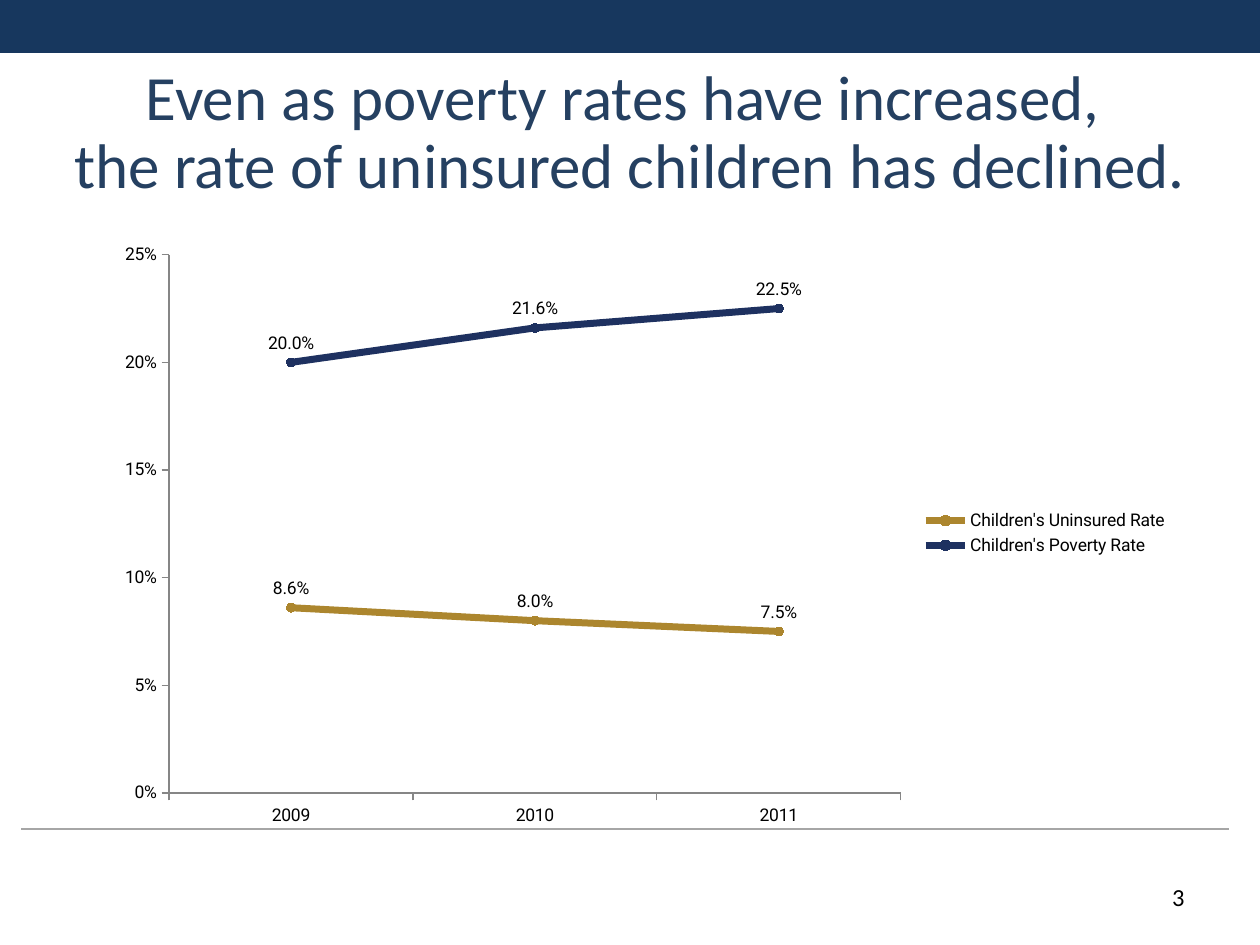
from dataclasses import dataclass

from lxml import etree
from pptx import Presentation
from pptx.chart.data import CategoryChartData
from pptx.dml.color import RGBColor
from pptx.enum.chart import (XL_CHART_TYPE, XL_LABEL_POSITION, XL_LEGEND_POSITION,
                             XL_MARKER_STYLE, XL_TICK_MARK)
from pptx.enum.shapes import MSO_CONNECTOR, MSO_SHAPE
from pptx.enum.text import MSO_ANCHOR, MSO_AUTO_SIZE, PP_ALIGN
from pptx.oxml.ns import qn
from pptx.util import Inches, Pt

LINE_MARKERS = XL_CHART_TYPE.LINE_MARKERS
LABEL_ABOVE = XL_LABEL_POSITION.ABOVE
LEGEND_RIGHT = XL_LEGEND_POSITION.RIGHT
CIRCLE = XL_MARKER_STYLE.CIRCLE
TICK_OUTSIDE = XL_TICK_MARK.OUTSIDE
STRAIGHT = MSO_CONNECTOR.STRAIGHT
RECTANGLE = MSO_SHAPE.RECTANGLE
MIDDLE = MSO_ANCHOR.MIDDLE
NO_AUTOFIT = MSO_AUTO_SIZE.NONE
CENTER, RIGHT = PP_ALIGN.CENTER, PP_ALIGN.RIGHT


@dataclass(frozen=True)
class Theme:
    band: RGBColor = RGBColor.from_string("17375E")
    title: RGBColor = RGBColor.from_string("254061")
    text: RGBColor = RGBColor.from_string("000000")
    rule: RGBColor = RGBColor.from_string("A6A6A6")
    axis: RGBColor = RGBColor.from_string("868686")
    uninsured: RGBColor = RGBColor.from_string("AC862E")
    poverty: RGBColor = RGBColor.from_string("1E3160")
    text_font: str = "Calibri"
    chart_font: str = "Roboto"
    title_size: Pt = Pt(36)
    number_size: Pt = Pt(14)
    chart_size: Pt = Pt(10)


THEME = Theme()
YEARS = ("2009", "2010", "2011")
RATES = (
    ("Children's Uninsured Rate", (0.086, 0.08, 0.075), THEME.uninsured),
    ("Children's Poverty Rate", (0.2, 0.216, 0.225), THEME.poverty),
)
PLOT_SHARES = {"x": 0.06, "y": 0.04, "w": 0.68, "h": 0.89}


def inches(*lengths):
    return tuple(Inches(length) for length in lengths)


def style_font(font, name, size, color):
    font.name, font.size = name, size
    font.color.rgb = color


def add_band(page, box):
    band = page.shapes.add_shape(RECTANGLE, *box)
    band.shadow.inherit = False
    band.fill.solid()
    band.fill.fore_color.rgb = THEME.band
    band.line.fill.background()


def add_rule(page, box):
    left, top, width, height = box
    rule = page.shapes.add_connector(STRAIGHT, left, top, left + width, top + height)
    rule.line.color.rgb = THEME.rule
    rule.line.width = Pt(0.75)
    etree.SubElement(rule._element.spPr, qn("a:effectLst"))


def place_title(page, box, text):
    title = page.shapes.title
    title.left, title.top, title.width, title.height = box
    frame = title.text_frame
    frame.text = text
    frame.auto_size = NO_AUTOFIT
    frame.vertical_anchor = MIDDLE
    para = frame.paragraphs[0]
    para.alignment = CENTER
    para.line_spacing = 0.9
    style_font(para.font, THEME.text_font, THEME.title_size, THEME.title)


def style_axis(axis):
    axis.has_major_gridlines = False
    axis.major_tick_mark = TICK_OUTSIDE
    axis.format.line.color.rgb = THEME.axis
    axis.format.line.width = Pt(0.75)


def style_series(series, color):
    series.smooth = False
    series.format.line.color.rgb = color
    series.format.line.width = Pt(4)
    marker = series.marker
    marker.style, marker.size = CIRCLE, 5
    marker.format.fill.solid()
    marker.format.fill.fore_color.rgb = color
    marker.format.line.color.rgb = color
    labels = series.data_labels
    labels.show_value = True
    labels.position = LABEL_ABOVE
    labels.number_format, labels.number_format_is_linked = "0.0%", False


def set_plot_area(chart):
    area = chart._chartSpace.chart.plotArea
    for layout in area.findall(qn("c:layout")):
        area.remove(layout)
    layout = etree.Element(qn("c:layout"))
    manual = etree.SubElement(layout, qn("c:manualLayout"))
    settings = {"layoutTarget": "inner", "xMode": "edge", "yMode": "edge", **PLOT_SHARES}
    for tag, value in settings.items():
        etree.SubElement(manual, qn(f"c:{tag}")).set("val", str(value))
    area.insert(0, layout)


def add_rates_chart(page, box):
    data = CategoryChartData(number_format="0.0%")
    data.categories = YEARS
    for name, values, _ in RATES:
        data.add_series(name, values)
    chart = page.shapes.add_chart(LINE_MARKERS, *box, data).chart
    style_font(chart.font, THEME.chart_font, THEME.chart_size, THEME.text)
    chart.has_title = False
    chart.has_legend = True
    chart.legend.position = LEGEND_RIGHT
    chart.legend.include_in_layout = False
    style_axis(chart.category_axis)
    values_axis = chart.value_axis
    style_axis(values_axis)
    values_axis.minimum_scale, values_axis.maximum_scale = 0, 0.25
    values_axis.major_unit = 0.05
    values_axis.tick_labels.number_format = "0%"
    values_axis.tick_labels.number_format_is_linked = False
    chart.plots[0].vary_by_categories = False
    for series, (_, _, color) in zip(chart.plots[0].series, RATES):
        style_series(series, color)
    set_plot_area(chart)


def add_page_number(page, box, number):
    frame = page.shapes.add_textbox(*box).text_frame
    frame.word_wrap = True
    frame.text = number
    para = frame.paragraphs[0]
    para.alignment = RIGHT
    style_font(para.font, THEME.text_font, THEME.number_size, THEME.text)


def main():
    deck = Presentation()
    deck.slide_width, deck.slide_height = inches(10, 7.5)
    page = deck.slides.add_slide(deck.slide_layouts[5])
    add_band(page, inches(0, 0, 10, 0.42))
    add_rule(page, inches(0.17, 6.58, 9.58, 0))
    place_title(page, inches(0, 0.5, 10, 1.13),
                "Even as poverty rates have increased, \v"
                "the rate of uninsured children has declined.")
    add_rates_chart(page, inches(0.83, 1.83, 8.54, 4.8))
    add_page_number(page, inches(7.17, 6.95, 2.33, 0.4), "3")
    deck.save("out.pptx")


if __name__ == "__main__":
    main()
